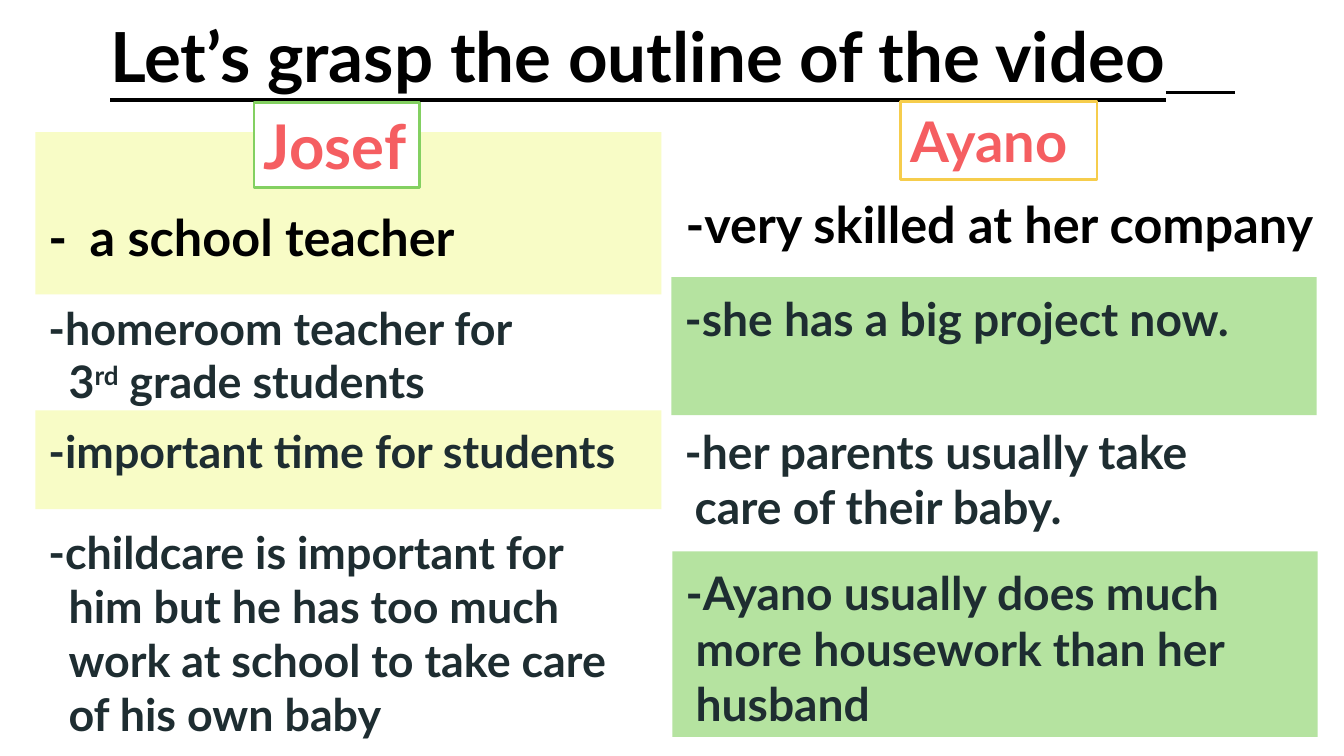
from dataclasses import dataclass

import pptx
import pptx.dml.color
import pptx.enum.shapes
import pptx.enum.text
import pptx.util
from lxml import etree

Inches = pptx.util.Inches
Pt = pptx.util.Pt

BLACK, SLATE, CORAL, WHITE = "000000", "1E2D31", "F55E61", "FFFFFF"
YELLOW, GREEN = "F8FCC6", "B5E3A0"
MARGINS = (0.13, 0.13, 0.13, 0.13)
DRAWING = "http://schemas.openxmlformats.org/drawingml/2006/main"


@dataclass
class Point:
    """One list entry; without a fill it goes in a body placeholder."""
    box: tuple[float, float, float, float]
    text: str
    size: float
    hang: float
    color: str = SLATE
    fill: str | None = None
    top_margin: float = 0.13


@dataclass
class NameLabel:
    box: tuple[float, float, float, float]
    name: str
    size: float
    outline: str


# Text between carets is raised; \v starts a new line within the entry
POINTS = [
    # Josef
    Point((0.35, 1.31, 6.21, 1.61), "-\ta school teacher", 36, 0.41, BLACK, YELLOW, 0.73),
    Point((0.35, 2.85, 6.21, 1.48), "-homeroom teacher for\v3^rd^ grade students", 32, 0.2),
    Point((0.35, 4.07, 6.21, 0.98), "-important time for students", 32, 0.2, fill=YELLOW),
    Point((0.35, 5.08, 6.21, 2.36),
          "-childcare is important for\vhim but he has too much\v"
          "work at school to take care\vof his own baby", 32, 0.2),
    # Ayano
    Point((6.67, 1.19, 6.67, 1.58), "-very skilled at her company", 36, 0.1, BLACK,
          top_margin=0.73),
    Point((6.66, 2.75, 6.4, 1.37), "-she has a big project now.", 33, 0.1, fill=GREEN),
    Point((6.66, 4.07, 6.4, 1.26), "-her parents usually take\vcare of their baby.", 33, 0.1),
    Point((6.67, 5.47, 6.4, 1.84),
          "-Ayano usually does much\vmore housework than her\vhusband", 33, 0.1, fill=GREEN),
]
LABELS = [
    NameLabel((2.52, 1.02, 1.64, 0.84), "Josef", 44, "83D061"),
    NameLabel((8.93, 1.01, 1.95, 0.77), "Ayano", 40, "F6CD4C"),
]


def rgb(color: str) -> pptx.dml.color.RGBColor:
    return pptx.dml.color.RGBColor.from_string(color)


def place(shape, box: tuple[float, float, float, float]) -> None:
    shape.left, shape.top, shape.width, shape.height = map(Inches, box)


def add_box(slide, box: tuple[float, float, float, float], fill: str,
            outline: str | None = None):
    shape = slide.shapes.add_shape(
        pptx.enum.shapes.MSO_SHAPE.RECTANGLE, *map(Inches, box))
    shape.shadow.inherit = False
    shape.fill.solid()
    shape.fill.fore_color.rgb = rgb(fill)
    if outline:
        shape.line.color.rgb = rgb(outline)
        shape.line.width = Pt(2)
    else:
        shape.line.fill.background()
    return shape


def set_text(shape, text: str, *, size: float, color: str, hang: float = 0,
             margins: tuple[float, float, float, float] = MARGINS,
             underline: bool = False,
             align=pptx.enum.text.PP_ALIGN.LEFT) -> None:
    frame = shape.text_frame
    frame.word_wrap = True
    frame.auto_size = pptx.enum.text.MSO_AUTO_SIZE.NONE
    frame.vertical_anchor = pptx.enum.text.MSO_ANCHOR.TOP
    (frame.margin_left, frame.margin_top,
     frame.margin_right, frame.margin_bottom) = map(Inches, margins)

    paragraph = frame.paragraphs[0]
    paragraph.alignment = align
    paragraph.space_before = paragraph.space_after = Pt(0)
    paragraph.line_spacing = 1.0
    # Hanging indent without a bullet
    properties = paragraph._p.get_or_add_pPr()
    properties.set("marL", str(Inches(hang)))
    properties.set("indent", str(-Inches(hang)))
    etree.SubElement(properties, f"{{{DRAWING}}}buNone")

    for line_number, line in enumerate(text.split("\v")):
        if line_number:
            paragraph.add_line_break()
        for part_number, part in enumerate(line.split("^")):
            run = paragraph.add_run()
            run.text = part
            run.font.name = "Lato"
            run.font.size = Pt(size)
            run.font.bold = True
            run.font.underline = underline
            run.font.color.rgb = rgb(color)
            if part_number % 2:
                run._r.get_or_add_rPr().set("baseline", "30000")


def main() -> None:
    presentation = pptx.Presentation()
    presentation.slide_width = Inches(13.33)
    presentation.slide_height = Inches(7.5)
    layout = presentation.slide_layouts.get_by_name("Comparison")
    slide = presentation.slides.add_slide(layout)

    # Title
    title = slide.shapes.title
    place(title, (0.52, 0, 12.3, 1.37))
    set_text(title, "Let’s grasp the outline of the video　", size=49.3, color=BLACK,
             underline=True, align=pptx.enum.text.PP_ALIGN.CENTER)

    # Points about each parent
    bodies = iter([slide.placeholders[index] for index in range(1, 5)])
    for point in POINTS:
        if point.fill:
            shape = add_box(slide, point.box, point.fill)
        else:
            shape = next(bodies)
            place(shape, point.box)
        set_text(shape, point.text, size=point.size, color=point.color, hang=point.hang,
                 margins=(0.13, point.top_margin, 0.13, 0.13))

    # Name labels
    for label in LABELS:
        shape = add_box(slide, label.box, WHITE, label.outline)
        set_text(shape, label.name, size=label.size, color=CORAL,
                 margins=(0.1, 0.05, 0, 0.05))

    presentation.save("out.pptx")


if __name__ == "__main__":
    main()
